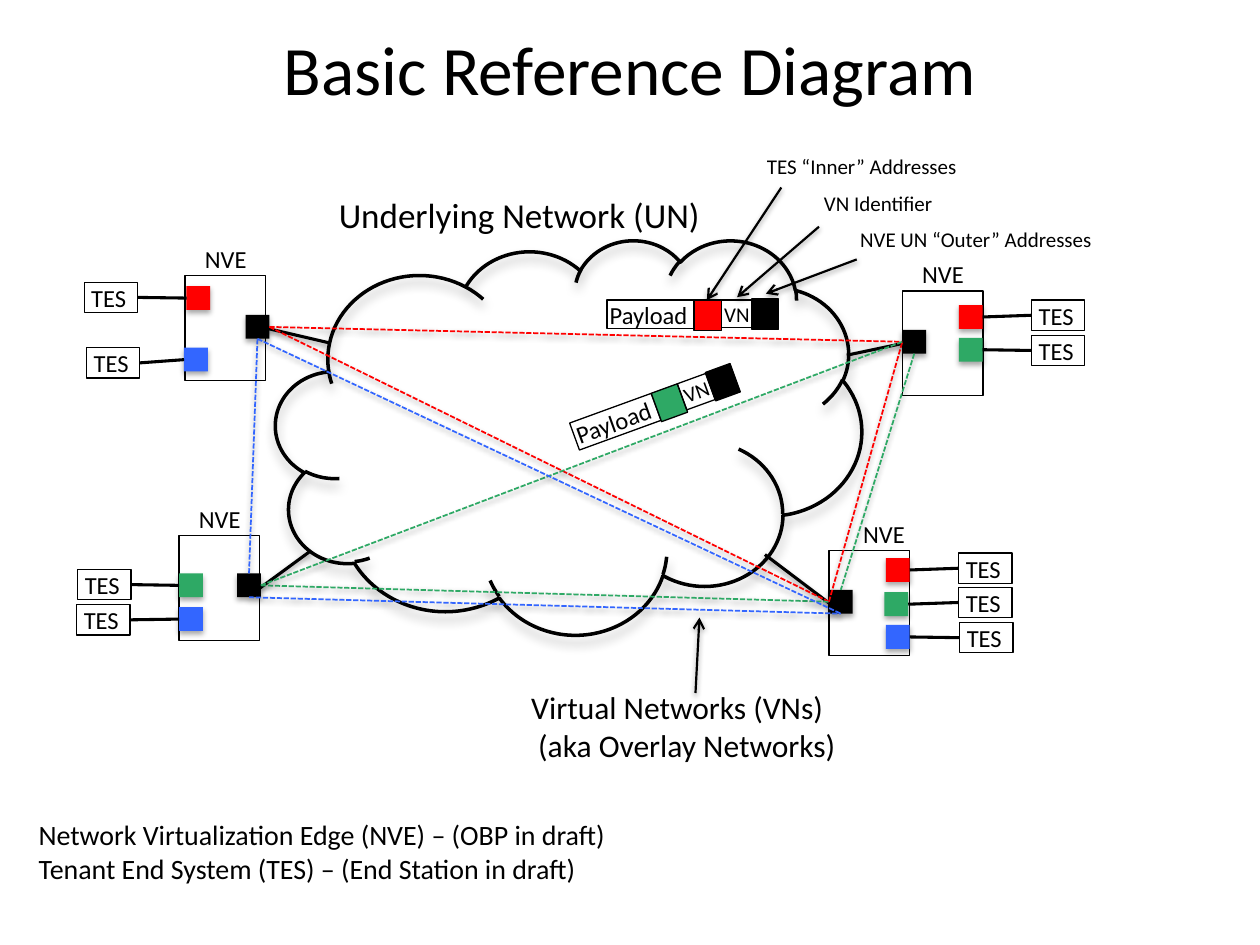
"""Build the slide "Basic Reference Diagram": tenant end systems, edges and overlay tunnels."""
from dataclasses import dataclass

from lxml.etree import SubElement
from pptx import Presentation
from pptx.dml.color import RGBColor as Rgb
from pptx.enum.dml import MSO_LINE as Dash
from pptx.enum.shapes import MSO_CONNECTOR as Conn, MSO_SHAPE as Geo
from pptx.enum.text import MSO_ANCHOR as Anchor, MSO_AUTO_SIZE as Auto, PP_ALIGN as Align
from pptx.oxml.ns import qn
from pptx.util import Cm, Pt


@dataclass(frozen=True)
class Theme:
    font: str = "Calibri"
    ink: str = "000000"
    red: str = "FF0000"
    green: str = "2EA965"
    blue: str = "3366FF"
    title: float = 39.6
    head: int = 20
    sub: int = 18
    body: int = 16
    label: int = 14
    note: int = 12
    thin: float = 0.75
    dash: int = 1
    arrow: float = 1.25
    wire: float = 1.75
    bold: int = 2


T = Theme()
TOP, LEFT, BOTTOM, RIGHT = range(4)
EDGE, PORT, HOST, LABEL = (1.63, 2.11), (0.48, 0.48), (1.07, 0.61), (1.37, 0.86)
LIFT = 0.77
CLOUD = (5.56, 4.83, 11.81, 7.95)
CLOUD_SHADE = (27, 6, 4)
PORT_SHADE = (35, 3.1, 1.8)
LINE_SHADE = (38, 3.1, 1.6)

TITLE = ("Basic Reference Diagram", (1.27, 0.51, 22.86, 1.73))
TEXTS = [
    (["Underlying Network (UN)"], (6.58, 3.78, 7.85, 1.12), T.head, 0),
    (["Virtual Networks (VNs)", "(aka Overlay Networks)"], (10.46, 13.74, 6.71, 1.8), T.sub, 0.14),
    (["Network Virtualization Edge (NVE) – (OBP in draft)",
      "Tenant End System (TES) – (End Station in draft)"], (0.53, 16.36, 12.09, 1.63), T.body, 0),
    (["TES “Inner” Addresses"], (15.21, 2.97, 4.39, 0.76), T.note, 0),
    (["VN Identifier"], (16.36, 3.71, 2.72, 0.76), T.note, 0),
    (["NVE UN “Outer” Addresses"], (17.09, 4.45, 5.26, 0.76), T.note, 0),
]
EDGES = {
    "nw": dict(box=(3.73, 5.56), shift=0.15, hub=(4.95, 6.35), side=RIGHT, tie=(6.63, 6.91), ports=[
        (T.red, (3.76, 5.77), (1.7, 5.69)), (T.blue, (3.71, 7.01), (1.75, 7.01))]),
    "sw": dict(box=(3.61, 10.8), shift=0.15, hub=(4.78, 11.56), side=RIGHT, tie=(6.27, 11.1), ports=[
        (T.green, (3.61, 11.56), (1.57, 11.48)), (T.blue, (3.61, 12.24), (1.55, 12.19))]),
    "ne": dict(box=(18.19, 5.87), shift=0.15, hub=(18.19, 6.65), side=LEFT, tie=(17.07, 7.16), ports=[
        (T.red, (19.33, 6.15), (20.8, 6.05)), (T.green, (19.33, 6.81), (20.8, 6.76))]),
    "se": dict(box=(16.71, 11.1), shift=0.44, hub=(16.71, 11.89), side=LEFT, tie=(15.42, 11.18), ports=[
        (T.red, (17.86, 11.25), (19.33, 11.15)), (T.green, (17.83, 11.94), (19.33, 11.84)),
        (T.blue, (17.86, 12.6), (19.35, 12.55))]),
}
TUNNELS = [
    (T.red, "nw", RIGHT, "ne", LEFT), (T.red, "se", LEFT, "ne", LEFT), (T.red, "nw", RIGHT, "se", LEFT),
    (T.green, "sw", RIGHT, "se", LEFT), (T.green, "sw", RIGHT, "ne", LEFT), (T.green, "ne", BOTTOM, "se", TOP),
    (T.blue, "sw", BOTTOM, "se", BOTTOM), (T.blue, "sw", TOP, "nw", BOTTOM), (T.blue, "nw", BOTTOM, "se", BOTTOM),
]
ARROWS = [
    ((14.02, 13.97), (14.1, 12.45)), ((15.75, 3.78), (14.25, 6.05)),
    ((17.27, 5.23), (15.44, 5.92)), ((16.51, 4.57), (14.86, 5.99)),
]
PACKETS = [((12.24, 6.05), 0, T.red), ((11.48, 7.92), -20, T.green)]


def put(item, **form):
    for key, val in form.items():
        setattr(item, key, val)


def shade(item, look):
    fx = SubElement(item._element.spPr, qn("a:effectLst"))
    if look:
        alpha, blur, dist = look
        drop = SubElement(fx, qn("a:outerShdw"), blurRad=str(Pt(blur)), dist=str(Pt(dist)),
                          dir="5400000", rotWithShape="0")
        tint = SubElement(drop, qn("a:srgbClr"), val=T.ink)
        SubElement(tint, qn("a:alpha"), val=str(alpha * 1000))


def write(frame, lines, size, align=Align.LEFT, indent=0):
    for num, line in enumerate(lines):
        para = frame.paragraphs[0] if num == 0 else frame.add_paragraph()
        para.text = line
        para.alignment = align
        if num and indent:
            para._p.get_or_add_pPr().set("marL", str(Cm(indent)))
        put(para.font, name=T.font, size=Pt(size))
        para.font.color.rgb = Rgb.from_string(T.ink)


def label(place, lines, rect, size, indent=0):
    frame = place.add_textbox(*map(Cm, rect)).text_frame
    put(frame, word_wrap=False, auto_size=Auto.SHAPE_TO_FIT_TEXT)
    write(frame, lines, size, indent=indent)


def shape(place, rect, fill=None, width=T.thin, look=None, geo=Geo.RECTANGLE):
    item = place.add_shape(geo, *map(Cm, rect))
    if fill:
        item.fill.solid()
        item.fill.fore_color.rgb = Rgb.from_string(fill)
    else:
        item.fill.background()
    if width:
        item.line.width = Pt(width)
        item.line.color.rgb = Rgb.from_string(T.ink)
    else:
        item.line.fill.background()
    shade(item, look)
    return item


def tag(place, rect, text, size, inset):
    item = shape(place, rect)
    put(item.text_frame, word_wrap=True, vertical_anchor=Anchor.MIDDLE, margin_left=Cm(inset),
        margin_right=0, margin_top=0, margin_bottom=0)
    write(item.text_frame, [text], size)
    return item


def link(place, start, end, tint=T.ink, width=T.wire, look=LINE_SHADE, dash=None, head=False):
    spots = [(0, 0) if hasattr(spot[0], "shape_id") else spot for spot in (start, end)]
    item = place.add_connector(Conn.STRAIGHT, *(Cm(val) for spot in spots for val in spot))
    for spot, join in ((start, item.begin_connect), (end, item.end_connect)):
        if hasattr(spot[0], "shape_id"):
            join(*spot)
    item.line.color.rgb = Rgb.from_string(tint)
    put(item.line, width=Pt(width), dash_style=dash)
    if head:
        SubElement(item.line._get_or_add_ln(), qn("a:tailEnd"), type="arrow")
    shade(item, look)


def packet(place, spot, turn, tint):
    group = place.add_group_shape()
    left, top = spot
    parts = group.shapes
    tag(parts, (left, top, 1.75, 0.58), "Payload", T.label, 0.05)
    shape(parts, (left + 1.75, top, 0.56, 0.61), tint)
    shape(parts, (left + 2.92, top - 0.02, 0.53, 0.61), T.ink)
    tag(parts, (left + 2.31, top, 0.61, 0.56), "VN", T.note, 0.05)
    group.rotation = turn


def main():
    deck = Presentation()
    put(deck, slide_width=Cm(25.4), slide_height=Cm(19.05))
    slide = deck.slides.add_slide(deck.slide_layouts[5])
    place = slide.shapes
    text, rect = TITLE
    put(place.title, **dict(zip(("left", "top", "width", "height"), map(Cm, rect))))
    place.title.text_frame.vertical_anchor = Anchor.MIDDLE
    write(place.title.text_frame, [text], T.title, Align.CENTER)

    shape(place, CLOUD, width=T.bold, look=CLOUD_SHADE, geo=Geo.CLOUD)
    for lines, rect, size, indent in TEXTS:
        label(place, lines, rect, size, indent)

    hubs = {}
    for name, edge in EDGES.items():
        left, top = edge["box"]
        side = edge["side"]
        box = shape(place, (left, top, *EDGE))
        label(place, ["NVE"], (left + edge["shift"], top - LIFT, *LABEL), T.label)
        link(place, (box, side), edge["tie"])
        hubs[name] = shape(place, edge["hub"] + PORT, T.ink, 0, PORT_SHADE)
        near, far = (LEFT, RIGHT) if side == RIGHT else (RIGHT, LEFT)
        for tint, spot, host in edge["ports"]:
            port = shape(place, spot + PORT, tint, 0, PORT_SHADE)
            tes = tag(place, host + HOST, "TES", T.label, 0.14)
            link(place, (port, near), (tes, far), look=None)

    for tint, start, out, end, into in TUNNELS:
        link(place, (hubs[start], out), (hubs[end], into), tint, T.dash, dash=Dash.SQUARE_DOT)
    for start, end in ARROWS:
        link(place, start, end, width=T.arrow, head=True)
    for spot, turn, tint in PACKETS:
        packet(place, spot, turn, tint)
    deck.save("out.pptx")


if __name__ == "__main__":
    main()
